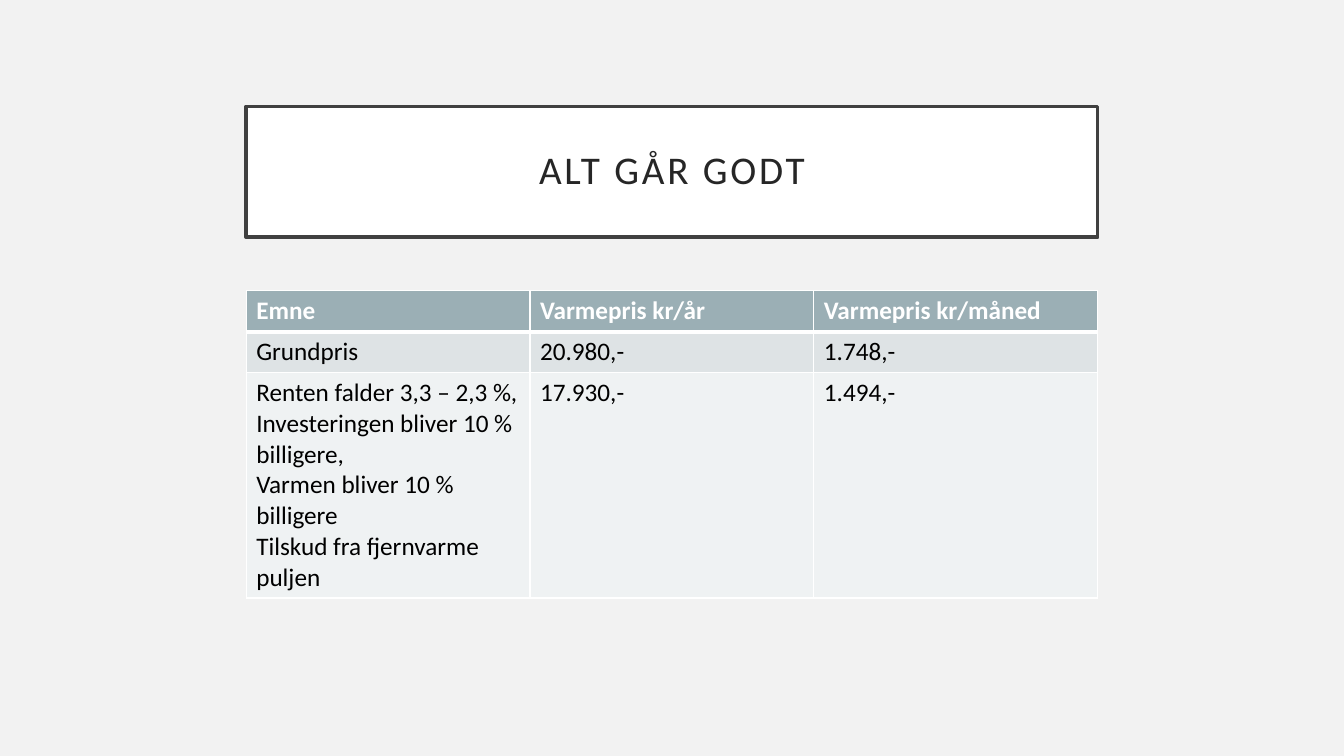
from lxml.etree import SubElement
from pptx import Presentation
from pptx.dml.color import RGBColor
from pptx.enum.shapes import MSO_SHAPE
from pptx.enum.text import MSO_ANCHOR, PP_ALIGN
from pptx.oxml import parse_xml
from pptx.oxml.ns import nsdecls
from pptx.util import Cm, Pt

# Content
TITLE = "ALT GÅR GODT"
PRICES = [
    ("Emne", "Varmepris kr/år", "Varmepris kr/måned"),
    ("Grundpris", "20.980,-", "1.748,-"),
    ("Renten falder 3,3 – 2,3 %,\nInvesteringen bliver 10 % billigere,\n"
     "Varmen bliver 10 % billigere\nTilskud fra fjernvarme puljen",
     "17.930,-", "1.494,-"),
]

# Colours and layout
BACKGROUND = RGBColor(0xF2, 0xF2, 0xF2)
WHITE = RGBColor(0xFF, 0xFF, 0xFF)
BLACK = RGBColor(0, 0, 0)
FRAME = RGBColor(0x40, 0x40, 0x40)
TITLE_INK = RGBColor(0x26, 0x26, 0x26)
ROW_FILLS = [RGBColor(0x9B, 0xAF, 0xB5), RGBColor(0xDE, 0xE3, 0xE5),
             RGBColor(0xEF, 0xF2, 0xF3)]
SLIDE_WIDTH, SLIDE_HEIGHT = Cm(33.87), Cm(19.05)
CONTENT_WIDTH = Cm(21.46)
LEFT = (SLIDE_WIDTH - CONTENT_WIDTH) // 2
ROW_HEIGHT = Cm(1.03)


def write(frame, text, size=18, color=BLACK, bold=False, align=PP_ALIGN.LEFT,
          line_spacing=1.0, tracking=0):
    paragraph = frame.paragraphs[0]
    paragraph.text = text
    paragraph.alignment = align
    paragraph.line_spacing = line_spacing
    for run in paragraph.runs:
        font = run.font
        font.name, font.size, font.bold = "Calibri", Pt(size), bold
        font.color.rgb = color
        if tracking:
            font._element.set("spc", str(tracking * 100))


def set_borders(cell, **widths):
    properties = cell._tc.get_or_add_tcPr()
    for index, side in enumerate("LRTB"):
        width = Pt(widths.get(side, 1))
        line = parse_xml(f'<a:ln{side} {nsdecls("a")} w="{width}"/>')
        fill = SubElement(line, line.tag.replace(f"ln{side}", "solidFill"))
        SubElement(fill, line.tag.replace(f"ln{side}", "srgbClr"), val=str(WHITE))
        properties.insert(index, line)


presentation = Presentation()
presentation.slide_width, presentation.slide_height = SLIDE_WIDTH, SLIDE_HEIGHT
slide = presentation.slides.add_slide(presentation.slide_layouts[6])
slide.background.fill.solid()
slide.background.fill.fore_color.rgb = BACKGROUND

# Framed title
title = slide.shapes.add_shape(MSO_SHAPE.RECTANGLE, LEFT, Cm(2.68),
                               CONTENT_WIDTH, Cm(3.3))
title.shadow.inherit = False
title.fill.solid()
title.fill.fore_color.rgb = WHITE
title.line.color.rgb = FRAME
title.line.width = Pt(2.5)
title_frame = title.text_frame
title_frame.word_wrap = True
title_frame.vertical_anchor = MSO_ANCHOR.MIDDLE
title_frame.margin_left = title_frame.margin_right = Cm(0.5)
title_frame.margin_top = title_frame.margin_bottom = Cm(0.5)
write(title_frame, TITLE, size=28, color=TITLE_INK, align=PP_ALIGN.CENTER,
      line_spacing=0.9, tracking=2)

# Price table
prices = slide.shapes.add_table(len(PRICES), len(PRICES[0]), LEFT, Cm(7.33),
                                CONTENT_WIDTH, ROW_HEIGHT * len(PRICES)).table
for row, texts in enumerate(PRICES):
    header = row == 0
    for column, text in enumerate(texts):
        cell = prices.cell(row, column)
        cell.fill.solid()
        cell.fill.fore_color.rgb = ROW_FILLS[row]
        set_borders(cell, T=3 if row == 1 else 1, B=3 if header else 1)
        write(cell.text_frame, text, color=WHITE if header else BLACK, bold=header)

presentation.save("out.pptx")
